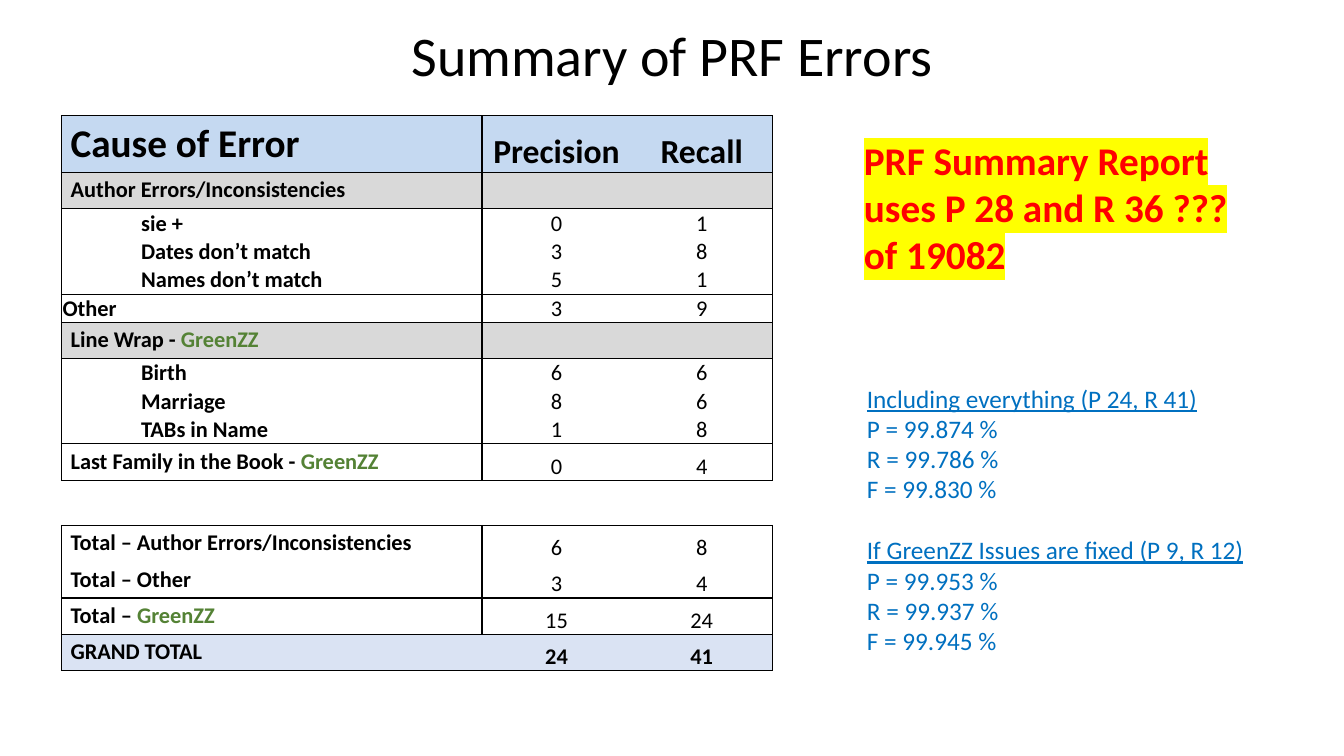
from dataclasses import dataclass

from lxml.etree import SubElement
from pptx import Presentation
from pptx.dml.color import RGBColor
from pptx.enum.text import MSO_ANCHOR as Anchor, MSO_AUTO_SIZE as AutoSize, PP_ALIGN as Align
from pptx.oxml.ns import qn
from pptx.util import Inches, Pt


@dataclass(frozen=True)
class Theme:
    font: str = "Calibri"
    ink: str = "000000"
    product: str = "548235"
    note: str = "0070C0"
    alert: str = "FF0000"
    marker: str = "FFFF00"
    header: str = "C5D9F1"
    section: str = "D9D9D9"
    grand: str = "DAE3F3"
    title_size: int = 40
    big_size: int = 28
    column_size: int = 24
    note_size: int = 18
    table_size: int = 16
    table_style: str = "{2D5ABB26-0587-4C30-8999-92F81FD0307C}"


@dataclass(frozen=True)
class Row:
    label: str = ""
    precision: str = ""
    recall: str = ""
    rule: float = 0  # line below the row, in points
    product: str = ""
    kind: str = "total"


PRODUCT = "GreenZZ"
ROWS = [
    Row("Cause of Error", "Precision", "Recall", 1, kind="header"),
    Row("Author Errors/Inconsistencies", rule=0.5, kind="section"),
    Row("sie +", "0", "1", kind="item"),
    Row("Dates don’t match", "3", "8", kind="item"),
    Row("Names don’t match", "5", "1", 0.5, kind="item"),
    Row("Other", "3", "9", 0.5, kind="other"),
    Row("Line Wrap - ", rule=0.5, product=PRODUCT, kind="section"),
    Row("Birth", "6", "6", kind="item"),
    Row("Marriage", "8", "6", kind="item"),
    Row("TABs in Name", "1", "8", 0.5, kind="item"),
    Row("Last Family in the Book - ", "0", "4", 0.5, PRODUCT),
    Row(rule=1, kind="gap"),
    Row("Total – Author Errors/Inconsistencies", "6", "8"),
    Row("Total – Other", "3", "4", 1),
    Row("Total – ", "15", "24", 1, PRODUCT),
    Row("GRAND TOTAL", "24", "41", 1, kind="grand"),
]
# Shares of the slide, in percent
COLUMN_SHARES = [5.85, 25.43, 11.1, 10.5]
ROW_SHARES = {"header": 7.47, "item": 3.73, "other": 3.73, "gap": 6}
USUAL_ROW_SHARE = 4.8

NOTES = [
    ("Including everything (P 24, R 41)", ["P = 99.874 %", "R = 99.786 %", "F = 99.830 %"]),
    (f"If {PRODUCT} Issues are fixed (P 9, R 12)",
     ["P = 99.953 %", "R = 99.937 %", "F = 99.945 %"]),
]


class SlideBuilder:
    def __init__(self, presentation, theme):
        self.presentation = presentation
        self.theme = theme
        self.slide = presentation.slides.add_slide(presentation.slide_layouts[5])

    def across(self, share):
        return round(self.presentation.slide_width * share / 100)

    def down(self, share):
        return round(self.presentation.slide_height * share / 100)

    def area(self, left, top, width, height):
        return self.across(left), self.down(top), self.across(width), self.down(height)

    def style(self, paragraph, size, color, bold=False, underline=False):
        for run in paragraph.runs:
            font = run.font
            font.name, font.size = self.theme.font, Pt(size)
            font.bold, font.underline = bold, underline
            font.color.rgb = RGBColor.from_string(color)

    def title(self, text, *area):
        shape = self.slide.shapes.title
        shape.left, shape.top, shape.width, shape.height = self.area(*area)
        shape.text_frame.text = text
        shape.text_frame.vertical_anchor = Anchor.MIDDLE
        paragraph = shape.text_frame.paragraphs[0]
        paragraph.alignment, paragraph.line_spacing = Align.CENTER, 0.9
        self.style(paragraph, self.theme.title_size, self.theme.ink)

    def text_box(self, lines, *area, wrap=True):
        text_frame = self.slide.shapes.add_textbox(*self.area(*area)).text_frame
        text_frame.word_wrap = wrap
        text_frame.auto_size = AutoSize.SHAPE_TO_FIT_TEXT
        text_frame.text = "\n".join(lines)
        return text_frame.paragraphs

    def callout(self, lines, *area):
        for paragraph in self.text_box(lines, *area):
            self.style(paragraph, self.theme.big_size, self.theme.alert, bold=True)
            for run in paragraph.runs:
                highlight = run.font._element.makeelement(qn("a:highlight"))
                SubElement(highlight, qn("a:srgbClr"), val=self.theme.marker)
                run.font._element.find(qn("a:solidFill")).addnext(highlight)

    def notes(self, groups, *area):
        lines = [line for heading, scores in groups for line in (heading, *scores)]
        headings = [heading for heading, scores in groups]
        size = self.theme.note_size
        for index, paragraph in enumerate(self.text_box(lines, *area, wrap=False)):
            is_heading = paragraph.text in headings
            self.style(paragraph, size, self.theme.note, underline=is_heading)
            if is_heading and index:
                paragraph.space_before = Pt(size * 1.22)

    def borders(self, cell, widths):
        properties = cell._tc.get_or_add_tcPr()
        for position, (side, width) in enumerate(zip("LRTB", widths)):
            line = properties.makeelement(qn(f"a:ln{side}"), w=str(Pt(width)))
            if width:
                fill = SubElement(line, qn("a:solidFill"))
                SubElement(fill, qn("a:srgbClr"), val=self.theme.ink)
            else:
                SubElement(line, qn("a:noFill"))
            properties.insert(position, line)

    def fill_cell(self, cell, text, size, bold, centred, padded, product=""):
        side, edge = (0.09, 0.04) if padded else (0.01, 0.01)
        cell.margin_left = cell.margin_right = Inches(side)
        cell.margin_top, cell.margin_bottom = Inches(edge), Inches(0.04 if padded else 0)
        cell.vertical_anchor = Anchor.TOP if padded else Anchor.BOTTOM
        paragraph = cell.text_frame.paragraphs[0]
        paragraph.alignment = Align.CENTER if centred else Align.LEFT
        if not text:
            SubElement(paragraph._p, qn("a:endParaRPr"), sz=str(size * 100))
            return
        paragraph.text = text
        if product:
            paragraph.add_run().text = product
        self.style(paragraph, size, self.theme.ink, bold)
        if product:
            paragraph.runs[-1].font.color.rgb = RGBColor.from_string(self.theme.product)

    def error_table(self, rows, *area):
        theme = self.theme
        frame = self.slide.shapes.add_table(len(rows), len(COLUMN_SHARES), *self.area(*area))
        table = frame.table
        table.first_row = table.horz_banding = False
        table._tbl.tblPr.find(qn("a:tableStyleId")).text = theme.table_style
        for column, share in zip(table.columns, COLUMN_SHARES):
            column.width = self.across(share)
        fills = {"header": theme.header, "section": theme.section, "grand": theme.grand}
        rule_above = 1
        for index, row in enumerate(rows):
            kind = row.kind
            table.rows[index].height = self.down(ROW_SHARES.get(kind, USUAL_ROW_SHARE))
            cells = [table.cell(index, column) for column in range(len(COLUMN_SHARES))]
            merged = kind not in ("item", "other", "gap")
            if merged:
                cells[0].merge(cells[1])
            texts = ["", row.label] if kind == "item" else [row.label, ""]
            texts += [row.precision, row.recall]
            outer = int(kind != "gap")
            divider = int(kind not in ("gap", "grand"))
            sides = [(outer, divider if merged else 0), (0, divider), (divider, 0), (0, outer)]
            for column, cell in enumerate(cells):
                is_value = column > 1
                size = theme.table_size
                if kind == "header":
                    size = theme.column_size if is_value else theme.big_size
                bold = not is_value or kind in ("header", "grand")
                self.fill_cell(cell, texts[column], size, bold, is_value,
                               merged and not is_value, "" if column else row.product)
                if kind in fills:
                    cell.fill.solid()
                    cell.fill.fore_color.rgb = RGBColor.from_string(fills[kind])
                else:
                    cell.fill.background()
                self.borders(cell, (*sides[column], rule_above, row.rule))
            rule_above = row.rule


def main():
    presentation = Presentation()
    presentation.slide_width, presentation.slide_height = Inches(13.33), Inches(7.5)
    builder = SlideBuilder(presentation, Theme())
    # Heading
    builder.title("Summary of PRF Errors", 8.25, 2.53, 83.5, 10.27)
    # Error counts
    builder.error_table(ROWS, 4.58, 15.33, 52.88, 72.93)
    # Scores and open question
    builder.notes(NOTES, 63.77, 50, 31.66, 37.73)
    builder.callout(["PRF Summary Report", "uses P 28 and R 36 ??? of 19082"],
                    63.54, 17.33, 29.78, 20.13)
    presentation.save("out.pptx")


if __name__ == "__main__":
    main()
